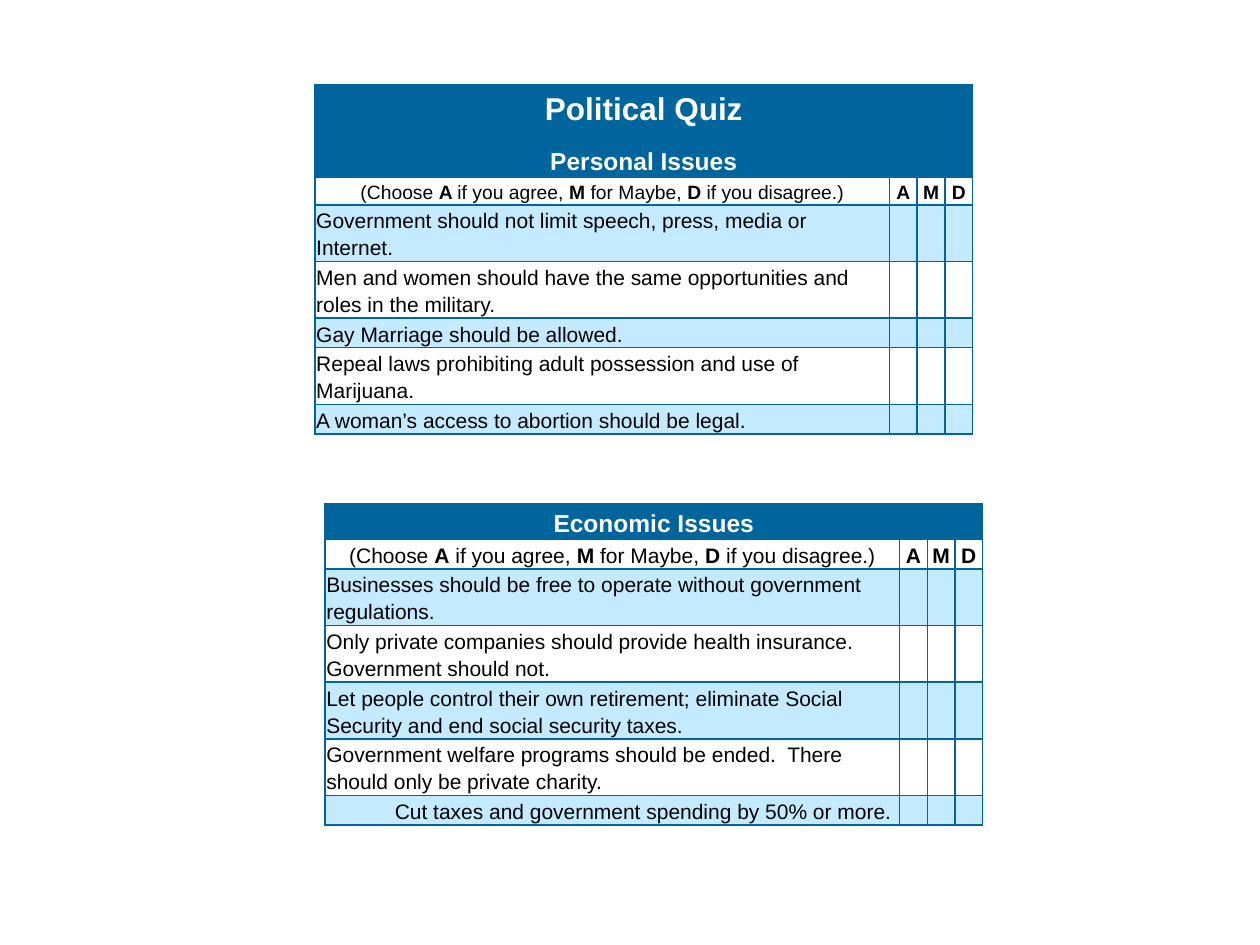
from dataclasses import dataclass

from lxml.etree import SubElement
from pptx import Presentation
from pptx.dml.color import RGBColor
from pptx.enum.text import MSO_ANCHOR as Anchor, PP_ALIGN as Align
from pptx.oxml.ns import qn
from pptx.util import Inches, Pt

BLUE, PALE, BLACK, WHITE = "00659C", "C4EAFF", "000000", "FFFFFF"
COLUMN_WIDTHS = [4.56, 0.22, 0.22, 0.22]
ONE_LINE, TWO_LINES = 0.23, 0.45


@dataclass
class Statement:
    text: str
    height: float = TWO_LINES
    align: Align = Align.LEFT


@dataclass
class Quiz:
    left: float
    top: float
    headings: list[tuple[str, int]]  # text and point size
    heading_height: float
    choice_text: str  # every second part between bars is bold
    choice_size: int
    choice_height: float
    statements: list[Statement]


QUIZZES = [
    Quiz(
        2.5, 0.67, [("Political Quiz", 18), ("Personal Issues", 14)], 0.74,
        "(Choose |A |if you agree, |M |for Maybe, |D |if you disagree.)", 11, 0.21,
        [
            Statement("Government should not limit speech, press, media or Internet."),
            Statement("Men and women should have the same opportunities and roles in the military."),
            Statement("Gay Marriage should be allowed.", ONE_LINE),
            Statement("Repeal laws prohibiting adult possession and use of Marijuana."),
            Statement("A woman’s access to abortion should be legal.", ONE_LINE),
        ],
    ),
    Quiz(
        2.58, 4, [("Economic Issues", 14)], 0.28,
        "(Choose |A| if you agree, |M |for Maybe, |D |if you disagree.)", 12, ONE_LINE,
        [
            Statement("Businesses should be free to operate without government regulations."),
            Statement("Only private companies should provide health insurance.  Government should not."),
            Statement("Let people control their own retirement; eliminate Social Security "
                      "and end social security taxes."),
            Statement("Government welfare programs should be ended.  There should only be private charity."),
            Statement("Cut taxes and government spending by 50% or more.", ONE_LINE, Align.RIGHT),
        ],
    ),
]


def color(value: str) -> RGBColor:
    return RGBColor.from_string(value)


def style_cell(cell, fill: str | None) -> None:
    """Set the borders, fill and margins of one cell."""
    properties = cell._tc.get_or_add_tcPr()
    for side in ("a:lnL", "a:lnR", "a:lnT", "a:lnB"):
        line = SubElement(properties, qn(side), w=str(Pt(1)))
        SubElement(SubElement(line, qn("a:solidFill")), qn("a:srgbClr"), val=BLUE)
    if fill:
        cell.fill.solid()
        cell.fill.fore_color.rgb = color(fill)
    else:
        cell.fill.background()
    cell.margin_left = cell.margin_right = Inches(0.01)
    cell.margin_top = cell.margin_bottom = Inches(0.01)
    cell.vertical_anchor = Anchor.MIDDLE


def style_paragraph(paragraph, size: int, align: Align = Align.CENTER,
                    text_color: str = BLACK, bold: bool = False) -> None:
    paragraph.alignment = align
    paragraph.line_spacing = 1.15
    paragraph.space_after = Pt(10)
    font = paragraph.font
    font.name, font.size, font.bold = "Arial", Pt(size), bold
    font.color.rgb = color(text_color)


def draw_quiz(slide, quiz: Quiz) -> None:
    heights = [quiz.heading_height, quiz.choice_height] + [s.height for s in quiz.statements]
    table = slide.shapes.add_table(
        len(heights), len(COLUMN_WIDTHS), Inches(quiz.left), Inches(quiz.top),
        Inches(sum(COLUMN_WIDTHS)), Inches(sum(heights))).table
    table.first_row = table.horz_banding = False
    for column, width in zip(table.columns, COLUMN_WIDTHS):
        column.width = Inches(width)
    for index, (row, height) in enumerate(zip(table.rows, heights)):
        row.height = Inches(height)
        fill = BLUE if index == 0 else PALE if index % 2 == 0 else None
        for cell in row.cells:
            style_cell(cell, fill)
            style_paragraph(cell.text_frame.paragraphs[0], 12)

    # Heading across all columns
    heading = table.cell(0, 0)
    heading.merge(table.cell(0, len(COLUMN_WIDTHS) - 1))
    heading.text_frame.text = "\n".join(text for text, _ in quiz.headings)
    for paragraph, (_, size) in zip(heading.text_frame.paragraphs, quiz.headings):
        style_paragraph(paragraph, size, text_color=WHITE, bold=True)

    # Instructions and answer letters
    paragraph = table.cell(1, 0).text_frame.paragraphs[0]
    style_paragraph(paragraph, quiz.choice_size)
    for index, part in enumerate(quiz.choice_text.split("|")):
        run = paragraph.add_run()
        run.text = part
        run.font.bold = index % 2 == 1
    for column, letter in enumerate("AMD", start=1):
        paragraph = table.cell(1, column).text_frame.paragraphs[0]
        paragraph.text = letter
        style_paragraph(paragraph, quiz.choice_size, bold=True)

    # Statements
    for row, statement in enumerate(quiz.statements, start=2):
        cell = table.cell(row, 0)
        paragraph = cell.text_frame.paragraphs[0]
        paragraph.text = statement.text
        style_paragraph(paragraph, 12, statement.align)
        if statement.align == Align.RIGHT:
            cell.margin_right = Inches(0.06)


def main() -> None:
    presentation = Presentation()
    presentation.slide_width, presentation.slide_height = Inches(10), Inches(7.5)
    slide = presentation.slides.add_slide(presentation.slide_layouts[6])
    for quiz in QUIZZES:
        draw_quiz(slide, quiz)
    presentation.save("out.pptx")


if __name__ == "__main__":
    main()
